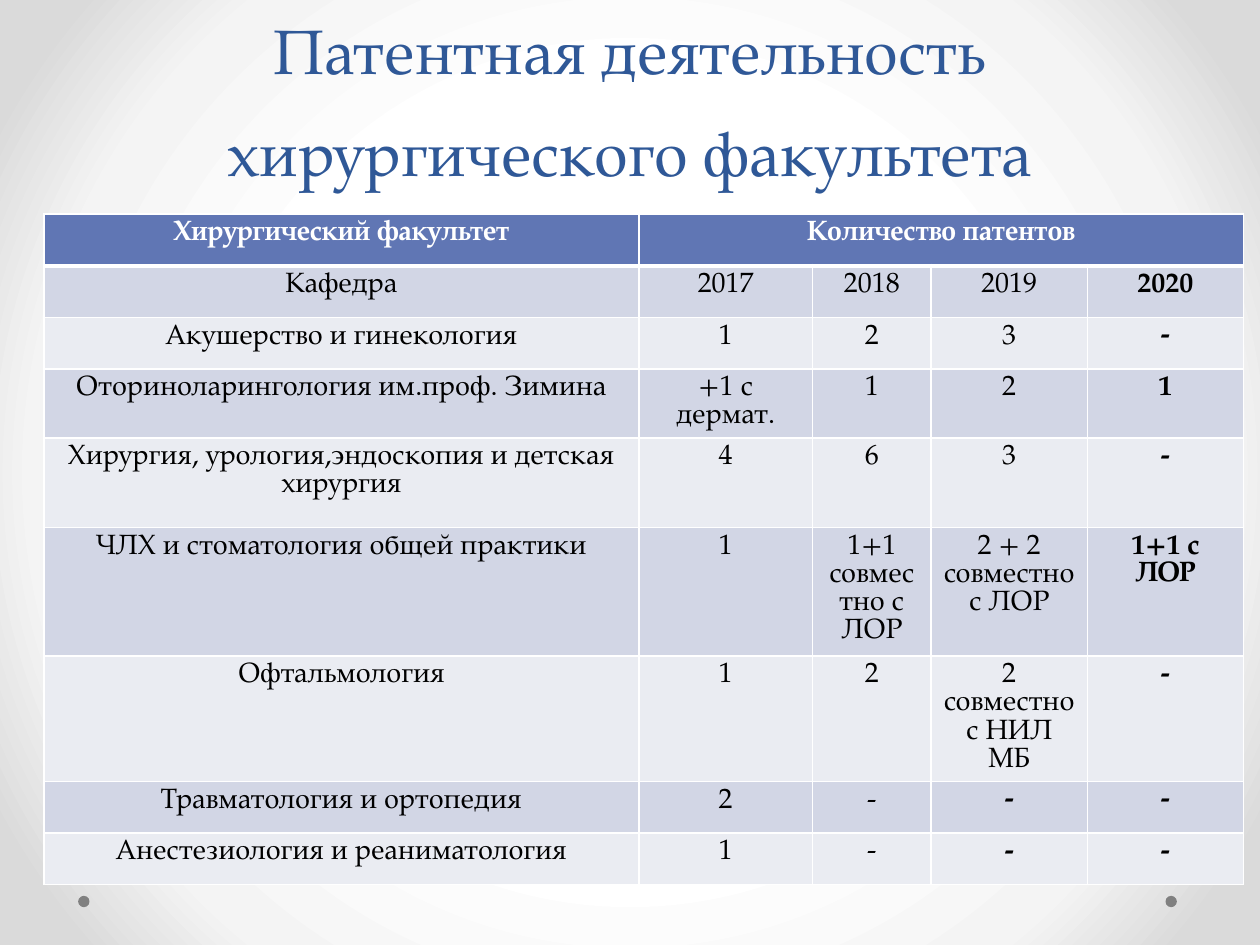
"""Build a slide with a table of patents by surgical department and year."""
from dataclasses import dataclass

from lxml import etree
from pptx import Presentation
from pptx.dml.color import RGBColor
from pptx.enum.shapes import MSO_SHAPE
from pptx.enum.text import MSO_ANCHOR, MSO_AUTO_SIZE, PP_ALIGN
from pptx.oxml import parse_xml
from pptx.oxml.ns import nsdecls, qn
from pptx.slide import Slide
from pptx.table import _Cell
from pptx.util import Inches, Pt

OVAL = MSO_SHAPE.OVAL
BOTTOM = MSO_ANCHOR.BOTTOM
NO_AUTOFIT = MSO_AUTO_SIZE.NONE
CENTER = PP_ALIGN.CENTER

FONT = "TeX Gyre Pagella"
TITLE_BLUE = RGBColor(0x2F, 0x58, 0x97)
HEADER_BLUE = RGBColor(0x60, 0x76, 0xB4)
DARK_BAND = RGBColor(0xD2, 0xD6, 0xE5)
LIGHT_BAND = RGBColor(0xEA, 0xEC, 0xF2)
DOT_GRAY = RGBColor(0x80, 0x80, 0x80)
SILVER = RGBColor(0xF4, 0xF4, 0xF4)
EDGE_GRAY = RGBColor(0xDA, 0xDA, 0xDA)
WHITE = RGBColor(0xFF, 0xFF, 0xFF)
BLACK = RGBColor(0x00, 0x00, 0x00)

BACKGROUND_STOPS = ((50, WHITE), (76, SILVER), (92, EDGE_GRAY))
DOT_LEFTS = (9.25, 0.62)
COLUMN_WIDTHS = (4.72, 1.38, 0.94, 1.24, 1.24)


@dataclass(frozen=True)
class TableRow:
    """Texts of one table row, its height and the first bold column."""

    texts: tuple[str, ...]
    height: float = 0.41
    bold_from: int = 4


ROWS = (
    TableRow(("Хирургический факультет", "Количество патентов"), bold_from=0),
    TableRow(("Кафедра", "2017", "2018", "2019", "2020")),
    TableRow(("Акушерство и гинекология", "1", "2", "3", "-")),
    TableRow(("Оториноларингология им.проф. Зимина", "+1 с дермат.", "1", "2", "1")),
    TableRow(("Хирургия, урология,эндоскопия и детская хирургия", "4", "6", "3", "-"), 0.71),
    TableRow(("ЧЛХ и стоматология общей практики", "1", "1+1 совместно с ЛОР",
              "2 + 2 совместно с ЛОР", "1+1 с ЛОР"), 1.02),
    TableRow(("Офтальмология", "1", "2", "2 совместно с НИЛ МБ", "-"), 0.57),
    TableRow(("Травматология и ортопедия", "2", "-", "-", "-"), bold_from=3),
    TableRow(("Анестезиология и реаниматология", "1", "-", "-", "-"), bold_from=3),
)


def set_background(slide: Slide) -> None:
    """Fill the slide with a circular gradient around its centre."""
    stops = "".join(
        f'<a:gs pos="{position * 1000}"><a:srgbClr val="{color}"/></a:gs>'
        for position, color in BACKGROUND_STOPS
    )
    background = parse_xml(
        f'<p:bg {nsdecls("p", "a")}><p:bgPr><a:gradFill><a:gsLst>{stops}</a:gsLst>'
        '<a:path path="circle"><a:fillToRect l="50000" t="50000" r="50000" b="50000"/></a:path>'
        "</a:gradFill><a:effectLst/></p:bgPr></p:bg>"
    )
    slide.element.cSld.insert(0, background)


def add_dot(slide: Slide, left: float) -> None:
    """Draw one small footer dot."""
    dot = slide.shapes.add_shape(OVAL, Inches(left), Inches(7.11), Inches(0.09), Inches(0.09))
    dot.shadow.inherit = False
    dot.fill.solid()
    dot.fill.fore_color.rgb = DOT_GRAY
    dot.line.fill.background()


def set_title(slide: Slide) -> None:
    """Place and format the title placeholder."""
    title = slide.shapes.title
    title.left, title.top, title.width, title.height = (
        Inches(0.5), Inches(0), Inches(9), Inches(1.55))
    frame = title.text_frame
    frame.text = "Патентная деятельность хирургического факультета"
    frame.word_wrap = True
    frame.auto_size = NO_AUTOFIT
    frame.vertical_anchor = BOTTOM
    paragraph = frame.paragraphs[0]
    paragraph.alignment = CENTER
    paragraph.line_spacing = Pt(58)
    paragraph.font.name = FONT
    paragraph.font.size = Pt(36)
    paragraph.font.color.rgb = TITLE_BLUE


def set_borders(cell: _Cell, top: int, bottom: int) -> None:
    """Give a cell white borders, with the side borders one point wide."""
    properties = cell._tc.get_or_add_tcPr()
    sides = (("a:lnL", 1), ("a:lnR", 1), ("a:lnT", top), ("a:lnB", bottom))
    for index, (tag, width) in enumerate(sides):
        line = etree.Element(qn(tag), w=str(Pt(width)))
        fill = etree.SubElement(line, qn("a:solidFill"))
        etree.SubElement(fill, qn("a:srgbClr"), val=str(WHITE))
        properties.insert(index, line)


def format_cell(cell: _Cell, text: str, row: int, bold: bool) -> None:
    """Write one cell and colour it by its row."""
    cell.text = text
    cell.fill.solid()
    cell.fill.fore_color.rgb = (
        HEADER_BLUE if row == 0 else DARK_BAND if row % 2 else LIGHT_BAND)
    paragraph = cell.text_frame.paragraphs[0]
    paragraph.alignment = CENTER
    paragraph.font.name = FONT
    paragraph.font.size = Pt(16)
    paragraph.font.bold = bold
    paragraph.font.color.rgb = BLACK if row else WHITE
    set_borders(cell, top=3 if row == 1 else 1, bottom=1 if row else 3)


def add_patent_table(slide: Slide) -> None:
    """Add the table of patents by department and year."""
    table = slide.shapes.add_table(
        len(ROWS), len(COLUMN_WIDTHS), Inches(0.35), Inches(1.7),
        Inches(sum(COLUMN_WIDTHS)), Inches(sum(row.height for row in ROWS)),
    ).table
    for column, width in zip(table.columns, COLUMN_WIDTHS):
        column.width = Inches(width)
    table.cell(0, 1).merge(table.cell(0, len(COLUMN_WIDTHS) - 1))
    for row_index, row in enumerate(ROWS):
        table.rows[row_index].height = Inches(row.height)
        for column_index in range(len(COLUMN_WIDTHS)):
            cell = table.cell(row_index, column_index)
            text = row.texts[column_index] if column_index < len(row.texts) else ""
            format_cell(cell, text, row_index, column_index >= row.bold_from)


def main() -> None:
    """Build and save the presentation."""
    presentation = Presentation()
    presentation.slide_width = Inches(10)
    presentation.slide_height = Inches(7.5)
    slide = presentation.slides.add_slide(presentation.slide_layouts[5])
    set_background(slide)
    for left in DOT_LEFTS:
        add_dot(slide, left)
    set_title(slide)
    add_patent_table(slide)
    presentation.save("out.pptx")


if __name__ == "__main__":
    main()
